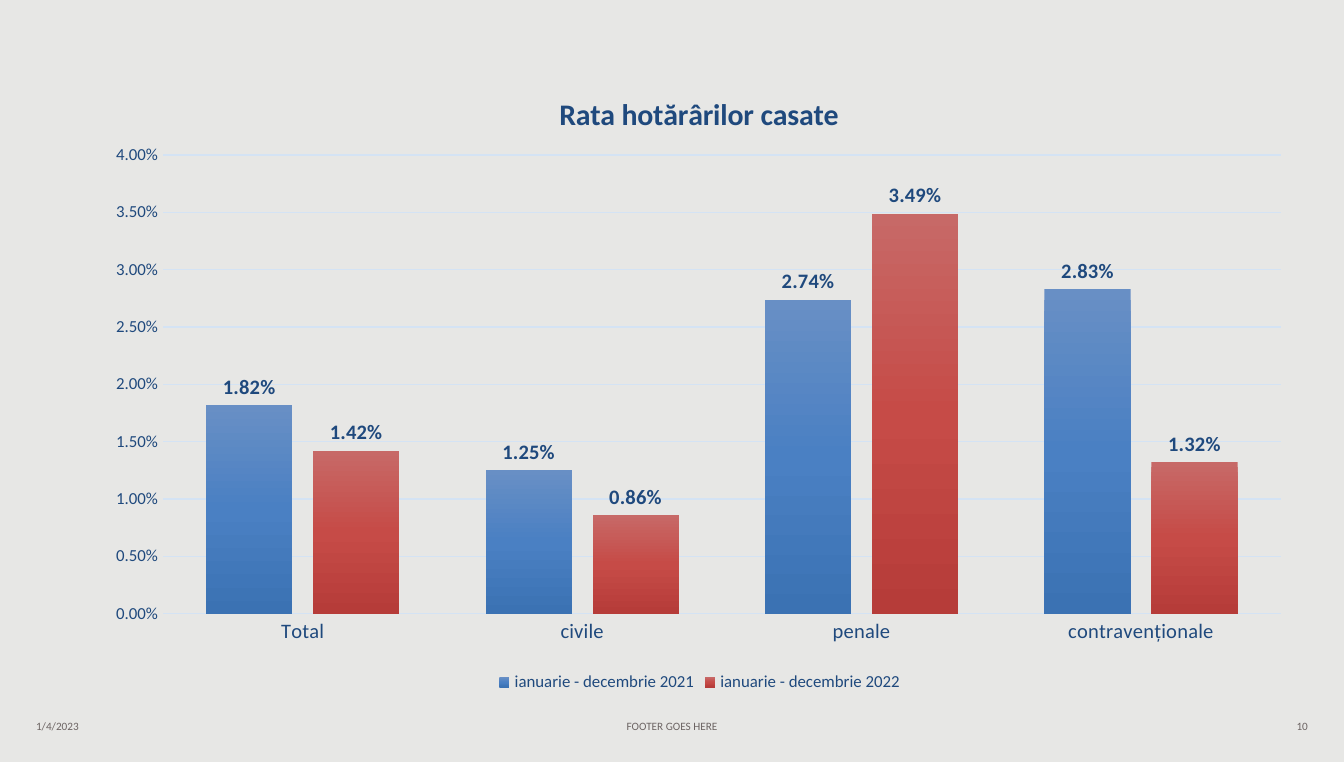
from copy import deepcopy

from pptx import Presentation
from pptx.chart.data import CategoryChartData
from pptx.dml.color import RGBColor
from pptx.enum.chart import XL_CHART_TYPE as ChartType
from pptx.enum.chart import XL_LABEL_POSITION as LabelPos
from pptx.enum.chart import XL_LEGEND_POSITION as LegendPos
from pptx.enum.chart import XL_TICK_MARK as Tick
from pptx.enum.text import MSO_ANCHOR, PP_ALIGN
from pptx.oxml import parse_xml
from pptx.oxml.ns import nsdecls, qn
from pptx.util import Inches, Pt

BACKGROUND = RGBColor(0xE7, 0xE7, 0xE5)
NAVY = RGBColor(0x1F, 0x49, 0x7D)
GRID = RGBColor(0xD4, 0xE3, 0xF4)
GREY = RGBColor(0x6C, 0x64, 0x63)
BLUES = (RGBColor(0x68, 0x8F, 0xC5), RGBColor(0x4A, 0x80, 0xC3), RGBColor(0x3B, 0x72, 0xB3))
REDS = (RGBColor(0xC7, 0x69, 0x67), RGBColor(0xC6, 0x4B, 0x47), RGBColor(0xB6, 0x3C, 0x39))
FONT = "Calibri"
PERCENT = "0.00%"

CATEGORIES = ("Total", "civile", "penale", "contravenționale")
SERIES = (
    ("ianuarie - decembrie 2021", (0.0182, 0.0125, 0.0274, 0.0283), BLUES),
    ("ianuarie - decembrie 2022", (0.0142, 0.0086, 0.0349, 0.0132), REDS),
)


def style_font(font, size, color=NAVY, bold=False):
    """Set typeface, size, colour and weight."""
    font.name, font.size, font.bold = FONT, Pt(size), bold
    font.color.rgb = color


def style_line(line):
    """Give an axis or gridline the pale grid colour."""
    line.color.rgb = GRID
    line.width = Pt(0.75)


def fill_gradient(series, colors):
    """Fill a series with evenly spaced colours from top to bottom."""
    fill = series.format.fill
    fill.gradient()
    fill.gradient_angle = 270
    stops = series._element.find(".//" + qn("a:gsLst"))
    for _ in colors[2:]:
        stops.append(deepcopy(stops[0]))
    for i, (stop, color) in enumerate(zip(fill.gradient_stops, colors)):
        stop.color.rgb = color
        stop.position = i / (len(colors) - 1)


def manual_layout(x, y, size=None, inner=False):
    """Return a chart layout element in fractions of the chart."""
    target = '<c:layoutTarget val="inner"/>' if inner else ""
    values = {"x": x, "y": y}
    if size:
        values.update(w=size[0], h=size[1])
    modes = "".join(f'<c:{k}Mode val="edge"/>' for k in "xy")
    parts = "".join(f'<c:{k} val="{v}"/>' for k, v in values.items())
    return parse_xml(
        f'<c:layout {nsdecls("c")}><c:manualLayout>{target}{modes}{parts}'
        "</c:manualLayout></c:layout>"
    )


def set_layout(parent, layout, before):
    """Put a layout in its parent, ahead of the named child."""
    for old in parent.findall(qn("c:layout")):
        parent.remove(old)
    parent.find(qn(before)).addprevious(layout)


def style_axes(chart):
    """Style the category and value axes."""
    cat, val = chart.category_axis, chart.value_axis
    for axis, size in ((cat, 11), (val, 9)):
        axis.major_tick_mark = axis.minor_tick_mark = Tick.NONE
        style_font(axis.tick_labels.font, size)
    style_line(cat.format.line)
    val.format.line.fill.background()
    val.has_major_gridlines = True
    style_line(val.major_gridlines.format.line)
    val.minimum_scale, val.maximum_scale, val.major_unit = 0, 0.04, 0.005
    val.tick_labels.number_format = PERCENT
    val.tick_labels.number_format_is_linked = False


def style_series(series, colors):
    """Colour one series and label its columns."""
    series.invert_if_negative = False
    fill_gradient(series, colors)
    labels = series.data_labels
    labels.show_value = True
    labels.number_format = PERCENT
    labels.number_format_is_linked = False
    labels.position = LabelPos.OUTSIDE_END
    style_font(labels.font, 11, bold=True)


def add_rate_chart(slide, box):
    """Add the clustered column chart in the given box."""
    data = CategoryChartData(number_format=PERCENT)
    data.categories = CATEGORIES
    for name, values, _ in SERIES:
        data.add_series(name, values)
    chart = slide.shapes.add_chart(ChartType.COLUMN_CLUSTERED, *box, data).chart
    chart.font.name, chart.font.size = FONT, Pt(10)

    chart.has_title = True
    p = chart.chart_title.text_frame.paragraphs[0]
    p.text = "Rata hotărârilor casate"
    style_font(p.font, 16, bold=True)
    set_layout(chart.chart_title._element, manual_layout(0.38, 0.04), "c:overlay")

    chart.has_legend = True
    chart.legend.position = LegendPos.BOTTOM
    chart.legend.include_in_layout = False
    style_font(chart.legend.font, 9)

    plot = chart.plots[0]
    plot.gap_width, plot.overlap, plot.vary_by_categories = 100, -24, False
    for series, (_, _, colors) in zip(plot.series, SERIES):
        style_series(series, colors)
    style_axes(chart)
    plot_area = chart._chartSpace.find(".//" + qn("c:plotArea"))
    layout = manual_layout(0.058, 0.145, (0.921, 0.723), inner=True)
    set_layout(plot_area, layout, "c:barChart")


def add_footer(slide, box):
    """Add the date, footer text and page number across the given box."""
    left, top, width, height = box
    side, middle = Inches(2.33), Inches(3.17)
    items = (
        ("1/4/2023", left, side, PP_ALIGN.LEFT),
        ("FOOTER GOES HERE", left + (width - middle) // 2, middle, PP_ALIGN.CENTER),
        ("10", left + width - side, side, PP_ALIGN.RIGHT),
    )
    for text, x, w, align in items:
        tf = slide.shapes.add_textbox(x, top, w, height).text_frame
        tf.word_wrap = True
        tf.vertical_anchor = MSO_ANCHOR.MIDDLE
        p = tf.paragraphs[0]
        p.text, p.alignment, p.space_after = text, align, Pt(6)
        style_font(p.font, 6, GREY)


def main():
    """Build and save the slide."""
    prs = Presentation()
    prs.slide_width, prs.slide_height = Inches(10), Inches(5.67)
    slide = prs.slides.add_slide(prs.slide_layouts[6])
    slide.background.fill.solid()
    slide.background.fill.fore_color.rgb = BACKGROUND
    add_footer(slide, (Inches(0.17), Inches(5.3), Inches(9.66), Inches(0.2)))
    add_rate_chart(slide, (Inches(0.69), Inches(0.47), Inches(9.03), Inches(4.72)))
    prs.save("out.pptx")


if __name__ == "__main__":
    main()
